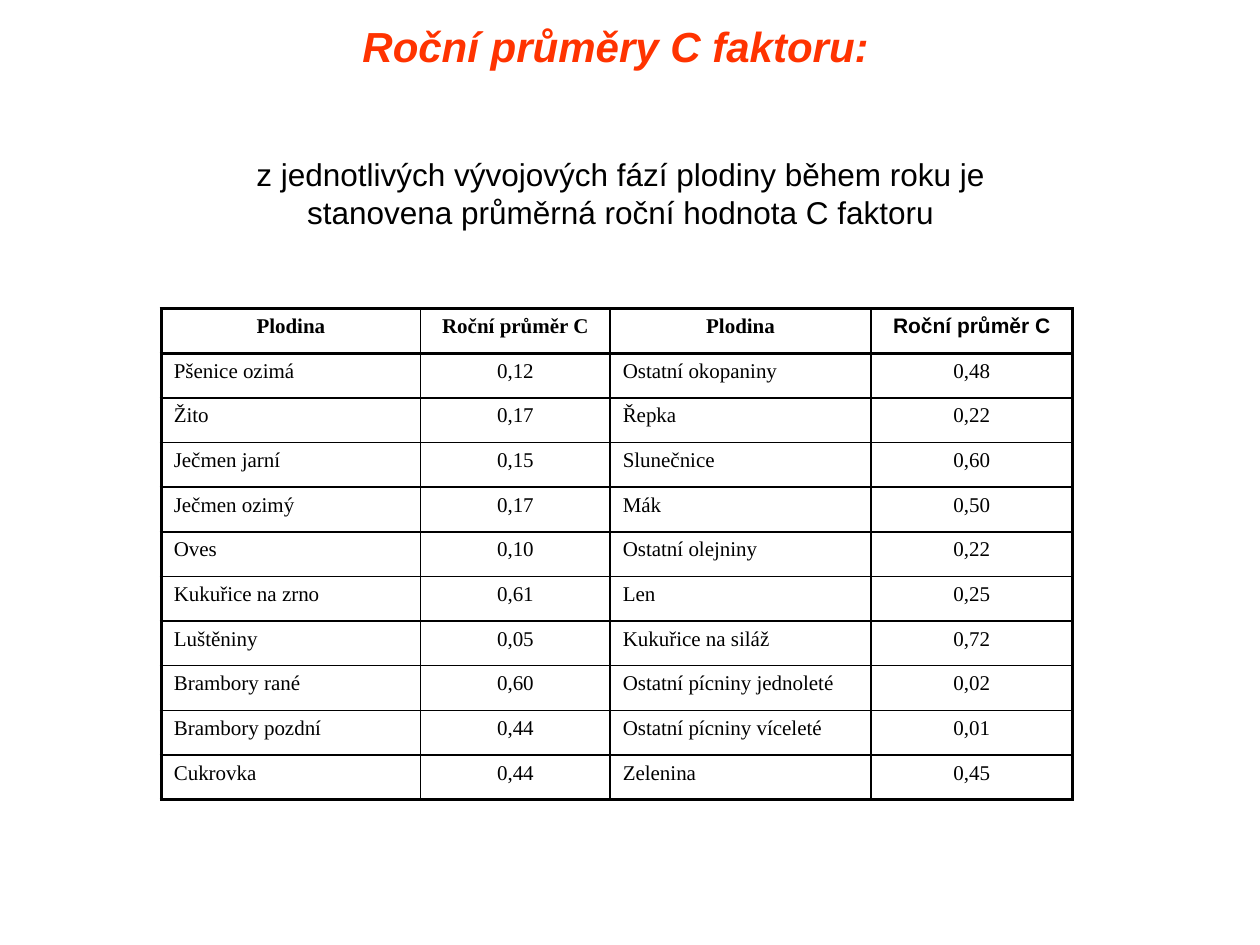
"""Build a slide with a table of the yearly averages of the C factor by crop."""
from lxml.etree import SubElement
from pptx import Presentation
from pptx.dml.color import RGBColor
from pptx.enum.text import MSO_ANCHOR, PP_ALIGN
from pptx.oxml.ns import qn
from pptx.util import Cm, Pt

TITLE = "Roční průměry C faktoru:"
INTRO = ("z jednotlivých vývojových fází plodiny během roku je "
         "stanovena průměrná roční hodnota C faktoru")
ROWS = [
    ("Plodina", "Roční průměr C", "Plodina", "Roční průměr C"),
    ("Pšenice ozimá", "0,12", "Ostatní okopaniny", "0,48"),
    ("Žito", "0,17", "Řepka", "0,22"),
    ("Ječmen jarní", "0,15", "Slunečnice", "0,60"),
    ("Ječmen ozimý", "0,17", "Mák", "0,50"),
    ("Oves", "0,10", "Ostatní olejniny", "0,22"),
    ("Kukuřice na zrno", "0,61", "Len", "0,25"),
    ("Luštěniny", "0,05", "Kukuřice na siláž", "0,72"),
    ("Brambory rané", "0,60", "Ostatní pícniny jednoleté", "0,02"),
    ("Brambory pozdní", "0,44", "Ostatní pícniny víceleté", "0,01"),
    ("Cukrovka", "0,44", "Zelenina", "0,45"),
]
COL_WIDTHS = (5.23, 3.82, 5.26, 4.06)
ROW_HEIGHT = 0.9
THEME = {
    "accent": "FF3300", "ink": "000000",
    "sans": "Arial", "serif": "Times New Roman",
    "title": 24, "intro": 18, "cell": 12,
    "thick": 2, "thin": 1,
}


def style(p, size, face="sans", color="ink", bold=False, italic=False,
          align=PP_ALIGN.CENTER):
    p.alignment = align
    p.space_before = Pt(0)
    p.font.size = Pt(THEME[size])
    p.font.name = THEME[face]
    p.font.color.rgb = RGBColor.from_string(THEME[color])
    p.font.bold = bold
    p.font.italic = italic


def fill_text(sp, text, **look):
    tf = sp.text_frame
    tf.word_wrap = True
    tf.vertical_anchor = MSO_ANCHOR.TOP
    tf.text = text
    style(tf.paragraphs[0], **look)


def set_borders(cell, widths):
    tc_pr = cell._tc.get_or_add_tcPr()
    for i, (side, width) in enumerate(widths.items()):
        ln = SubElement(tc_pr, qn(f"a:ln{side}"), w=str(Pt(width)))
        fill = SubElement(ln, qn("a:solidFill"))
        SubElement(fill, qn("a:srgbClr"), val=THEME["ink"])
        tc_pr.insert(i, ln)


def add_crop_table(slide):
    n_rows, n_cols = len(ROWS), len(COL_WIDTHS)
    frame = slide.shapes.add_table(n_rows, n_cols, Cm(3.25), Cm(6.22),
                                   Cm(sum(COL_WIDTHS)), Cm(n_rows * ROW_HEIGHT))
    table = frame.table
    for col, width in zip(table.columns, COL_WIDTHS):
        col.width = Cm(width)
    for r, row in enumerate(ROWS):
        table.rows[r].height = Cm(ROW_HEIGHT)
        for c, text in enumerate(row):
            cell = table.cell(r, c)
            cell.text = text
            cell.fill.background()
            header, last = r == 0, c == n_cols - 1
            style(cell.text_frame.paragraphs[0], "cell",
                  face="sans" if header and last else "serif", bold=header,
                  align=PP_ALIGN.CENTER if header or c % 2 else PP_ALIGN.LEFT)
            thick = {"L": c == 0, "R": last, "T": r <= 1,
                     "B": header or r == n_rows - 1}
            set_borders(cell, {side: THEME["thick" if on else "thin"]
                               for side, on in thick.items()})


def main():
    prs = Presentation()
    prs.slide_width, prs.slide_height = Cm(25.4), Cm(19.05)
    slide = prs.slides.add_slide(prs.slide_layouts[5])

    title = slide.shapes.title
    title.left, title.top, title.width, title.height = (
        Cm(6.91), Cm(0.28), Cm(11), Cm(1.27))
    fill_text(title, TITLE, size="title", color="accent", bold=True, italic=True)

    add_crop_table(slide)

    intro = slide.shapes.add_textbox(Cm(3.66), Cm(3), Cm(17.7), Cm(1.78))
    fill_text(intro, INTRO, size="intro")

    prs.save("out.pptx")


if __name__ == "__main__":
    main()
